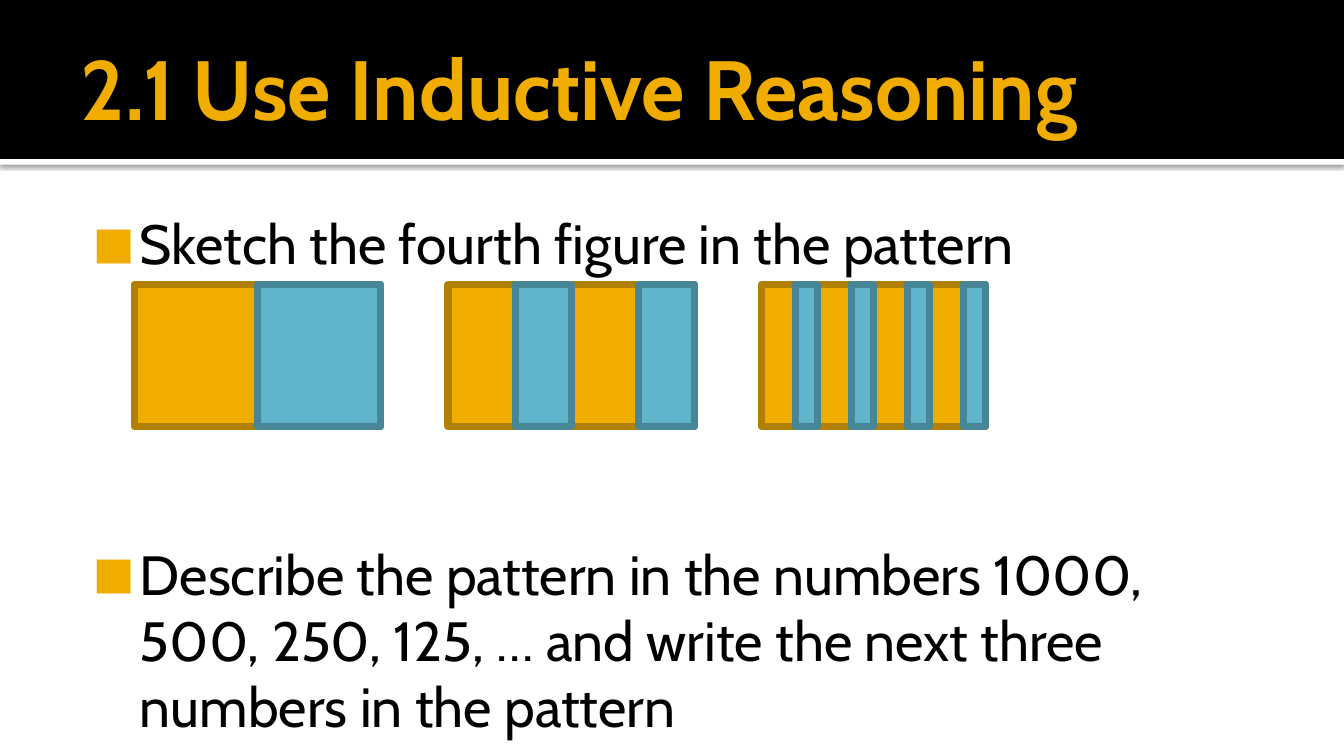
from lxml.etree import SubElement
from pptx import Presentation
from pptx.dml.color import RGBColor
from pptx.enum.shapes import MSO_SHAPE
from pptx.enum.text import MSO_ANCHOR, MSO_AUTO_SIZE, PP_ALIGN
from pptx.oxml.ns import qn
from pptx.util import Pt

PX = 7620  # EMU per px, 120 px to the inch
FONT = "Cabin"
COLORS = {
    "black": "000000",
    "white": "FFFFFF",
    "gold": "F0AD00",
    "gold_edge": "B28000",
    "blue": "60B5CC",
    "blue_edge": "478697",
}
QUESTIONS = [
    ("Sketch the fourth figure in the pattern", 0),
    ("Describe the pattern in the numbers 1000, 500, 250, 125, … "
     "and write the next three numbers in the pattern", 141.5),
]
# left, width, number of stripes, stripe width
FIGURES = [(120, 220, 1, 110), (400, 220, 2, 50), (680, 200, 4, 20)]
FIGURE_TOP, FIGURE_HEIGHT = 254, 127


def rgb(name):
    return RGBColor.from_string(COLORS[name])


def set_all(target, values):
    for name, value in values.items():
        setattr(target, name, value)


def add_rect(shapes, box, fill, edge=None):
    rect = shapes.add_shape(MSO_SHAPE.RECTANGLE, *(v * PX for v in box))
    rect.shadow.inherit = False
    rect.fill.solid()
    rect.fill.fore_color.rgb = rgb(fill)
    if edge:
        rect.line.color.rgb = rgb(edge)
        rect.line.width = Pt(3.78)
    else:
        rect.line.fill.background()
    return rect


def add_drop_shadow(shape):
    effects = shape.element.spPr.find(qn("a:effectLst"))
    shadow = SubElement(effects, qn("a:outerShdw"), blurRad=str(Pt(2.5)),
                        dist=str(Pt(0.8)), dir="5400000",
                        algn="tl", rotWithShape="0")
    color = SubElement(shadow, qn("a:srgbClr"), val=COLORS["black"])
    SubElement(color, qn("a:alpha"), val="60000")


def format_frame(frame, insets, anchor):
    sides = ("margin_left", "margin_top", "margin_right", "margin_bottom")
    set_all(frame, {
        "word_wrap": True,
        "auto_size": MSO_AUTO_SIZE.NONE,
        "vertical_anchor": anchor,
        **{side: inset * PX for side, inset in zip(sides, insets)},
    })


def write(paragraph, text, size, color, bold=False):
    paragraph.alignment = PP_ALIGN.LEFT
    run = paragraph.add_run()
    run.text = text
    set_all(run.font, {"name": FONT, "size": Pt(size), "bold": bold})
    run.font.color.rgb = rgb(color)


def add_bullet(paragraph):
    props = paragraph._p.get_or_add_pPr()
    props.set("marL", str(58 * PX))
    props.set("indent", str(-42 * PX))
    color = SubElement(props, qn("a:buClr"))
    SubElement(color, qn("a:srgbClr"), val=COLORS["gold"])
    SubElement(props, qn("a:buSzPct"), val="80000")
    SubElement(props, qn("a:buFont"), typeface=FONT)
    SubElement(props, qn("a:buChar"), char="■")


def add_header(slide):
    underline = add_rect(slide.shapes, (0, 142, 1200, 5), "white")
    add_drop_shadow(underline)
    add_rect(slide.shapes, (0, 0, 1200, 142), "black")

    heading = slide.shapes.title
    heading.element.getparent().append(heading.element)  # in front of the band
    set_all(heading, {"left": 60 * PX, "top": 16 * PX,
                      "width": 1080 * PX, "height": 124 * PX})
    format_frame(heading.text_frame, (12, 6, 6, 6), MSO_ANCHOR.MIDDLE)
    write(heading.text_frame.paragraphs[0], "2.1 Use Inductive Reasoning",
          45, "gold", bold=True)


def add_questions(slide):
    body = slide.shapes.add_textbox(60 * PX, 175 * PX, 1080 * PX, 455 * PX)
    frame = body.text_frame
    format_frame(frame, (7, 12, 12, 6), MSO_ANCHOR.TOP)
    for i, (question, gap) in enumerate(QUESTIONS):
        paragraph = frame.add_paragraph() if i else frame.paragraphs[0]
        paragraph.space_before = Pt(gap)
        write(paragraph, question, 29.6, "black")
        add_bullet(paragraph)


def add_figure(slide, left, width, count, stripe_width):
    """Gold rectangle with evenly spaced blue stripes, the last flush right."""
    figure = slide.shapes.add_group_shape().shapes
    add_rect(figure, (left, FIGURE_TOP, width, FIGURE_HEIGHT),
             "gold", "gold_edge")
    pitch = width // count
    for i in range(1, count + 1):
        stripe_left = left + i * pitch - stripe_width
        add_rect(figure, (stripe_left, FIGURE_TOP, stripe_width, FIGURE_HEIGHT),
                 "blue", "blue_edge")


def main():
    deck = Presentation()
    set_all(deck, {"slide_width": 1200 * PX, "slide_height": 675 * PX})
    slide = deck.slides.add_slide(deck.slide_layouts[5])
    add_header(slide)
    add_questions(slide)
    for figure in FIGURES:
        add_figure(slide, *figure)
    deck.save("out.pptx")


if __name__ == "__main__":
    main()
